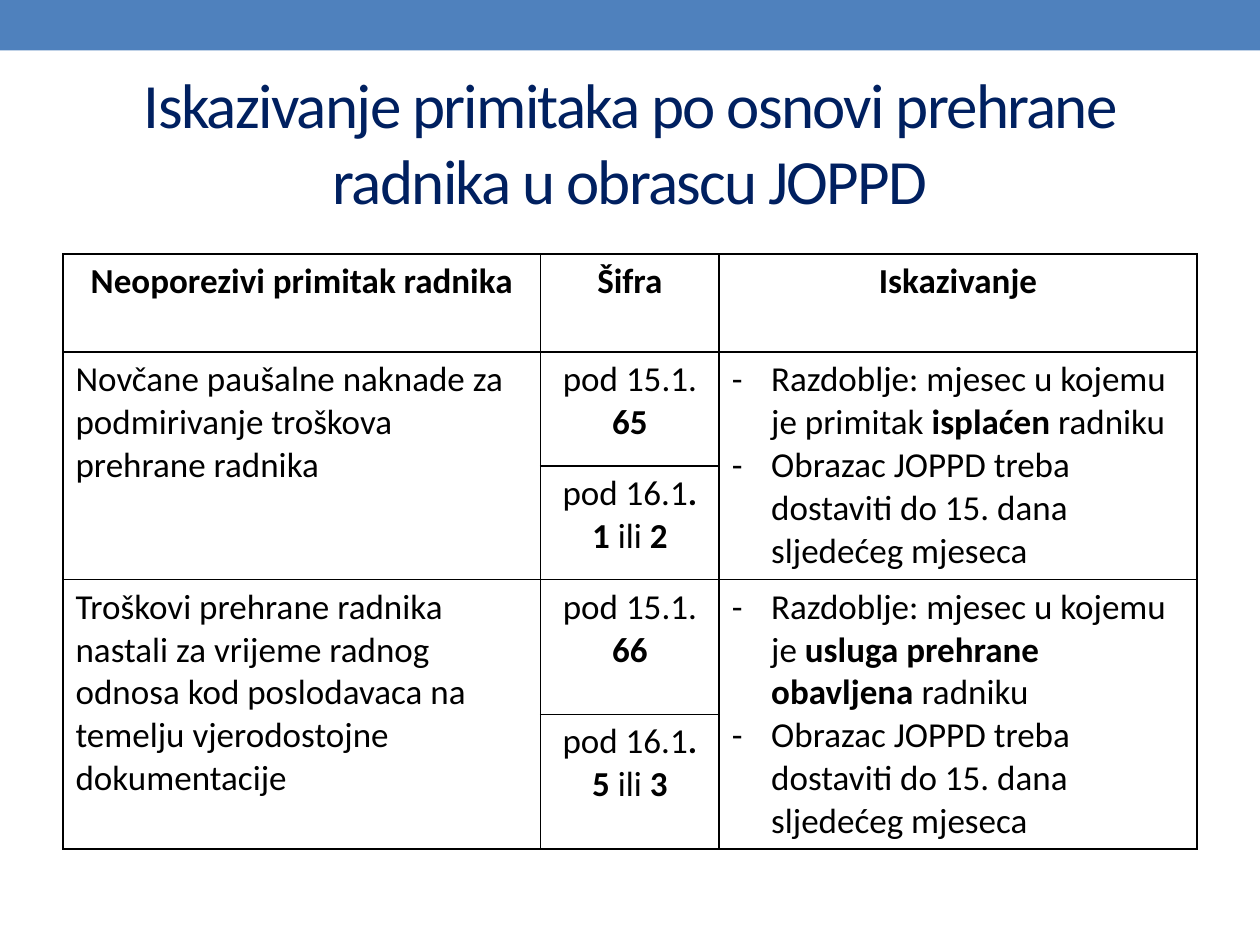
from lxml import etree
from pptx import Presentation
from pptx.dml.color import RGBColor
from pptx.enum import shapes, text
from pptx.oxml.ns import qn
from pptx.util import Pt

FONT = "Calibri"
BLACK = "000000"
MID = text.PP_ALIGN.CENTER
LEFT = text.PP_ALIGN.LEFT
COLS = [273, 102, 273]
ROWS = [56, 65, 65, 77, 77]
HEADS = ["Neoporezivi primitak radnika", "Šifra", "Iskazivanje"]
FILING = "Obrazac JOPPD treba dostaviti do 15. dana sljedećeg mjeseca"

# Asterisks enclose bold words: receipt, two code cells, reporting rules
GROUPS = [
    ("Novčane paušalne naknade za podmirivanje troškova prehrane radnika",
     [["pod 15.1.", "*65*"], ["pod 16.1*.*", "*1 *ili* 2*"]],
     ["Razdoblje: mjesec u kojemu je primitak* isplaćen *radniku", FILING]),
    ("Troškovi prehrane radnika nastali za vrijeme radnog odnosa kod "
     "poslodavaca na temelju vjerodostojne dokumentacije",
     [["pod 15.1.", "*66*"], ["pod 16.1*.*", "*5 *ili* 3*"]],
     ["Razdoblje: mjesec u kojemu je *usluga prehrane obavljena *radniku",
      FILING]),
]


def color(code):
    return RGBColor.from_string(code)


def style(run, size, code, bold=False):
    font = run.font
    font.name, font.size, font.bold = FONT, Pt(size), bold
    font.color.rgb = color(code)


def dash(para):
    """Give the paragraph a hanging dash bullet."""
    props = para._p.get_or_add_pPr()
    props.set("marL", str(Pt(22.5)))
    props.set("indent", str(-Pt(22.5)))
    etree.SubElement(props, qn("a:buFont"), typeface=FONT)
    etree.SubElement(props, qn("a:buChar"), char="-")


def frame(cell):
    """Draw a thin black border around an unfilled cell."""
    props = cell._tc.get_or_add_tcPr()
    for side in ("lnL", "lnR", "lnT", "lnB"):
        line = etree.SubElement(props, qn("a:" + side), w=str(Pt(1)))
        fill = etree.SubElement(line, qn("a:solidFill"))
        etree.SubElement(fill, qn("a:srgbClr"), val=BLACK)
    cell.fill.background()


def write(cell, lines, align=LEFT, bullet=False):
    body = cell.text_frame
    for i, line in enumerate(lines):
        para = body.add_paragraph() if i else body.paragraphs[0]
        para.alignment = align
        if bullet:
            dash(para)
        for j, part in enumerate(line.split("*")):
            if part:
                run = para.add_run()
                run.text = part
                style(run, 20, BLACK, bold=j % 2 == 1)


def add_band(slide):
    band = slide.shapes.add_shape(shapes.MSO_SHAPE.RECTANGLE,
                                  0, 0, Pt(720), Pt(28.8))
    band.shadow.inherit = False
    band.fill.solid()
    band.fill.fore_color.rgb = color("4F81BD")
    band.line.fill.background()


def add_title(slide, words):
    box = slide.shapes.add_textbox(Pt(36), Pt(41.8), Pt(648), Pt(77.8))
    body = box.text_frame
    body.word_wrap = True
    body.vertical_anchor = text.MSO_ANCHOR.MIDDLE
    body.text = words
    para = body.paragraphs[0]
    para.alignment = MID
    run = para.runs[0]
    style(run, 36, "002060")
    run._r.get_or_add_rPr().set("spc", "-100")


def add_grid(slide):
    shape = slide.shapes.add_table(len(ROWS), len(COLS), Pt(36), Pt(145.2),
                                   Pt(sum(COLS)), Pt(sum(ROWS)))
    grid = shape.table
    grid.first_row = grid.horz_banding = False
    for col, width in zip(grid.columns, COLS):
        col.width = Pt(width)
    for row, height in zip(grid.rows, ROWS):
        row.height = Pt(height)
    for cell in grid.iter_cells():
        frame(cell)

    for i, head in enumerate(HEADS):
        write(grid.cell(0, i), [f"*{head}*"], MID)
    for i, (name, codes, rules) in enumerate(GROUPS):
        top = 1 + 2 * i
        for col in (0, 2):
            grid.cell(top, col).merge(grid.cell(top + 1, col))
        write(grid.cell(top, 0), [name])
        for j, code in enumerate(codes):
            write(grid.cell(top + j, 1), code, MID)
        write(grid.cell(top, 2), rules, bullet=True)


def main():
    deck = Presentation()
    deck.slide_width, deck.slide_height = Pt(720), Pt(540)
    slide = deck.slides.add_slide(deck.slide_layouts[6])
    add_band(slide)
    add_title(slide, "Iskazivanje primitaka po osnovi prehrane "
                     "radnika u obrascu JOPPD")
    add_grid(slide)
    deck.save("out.pptx")


if __name__ == "__main__":
    main()
